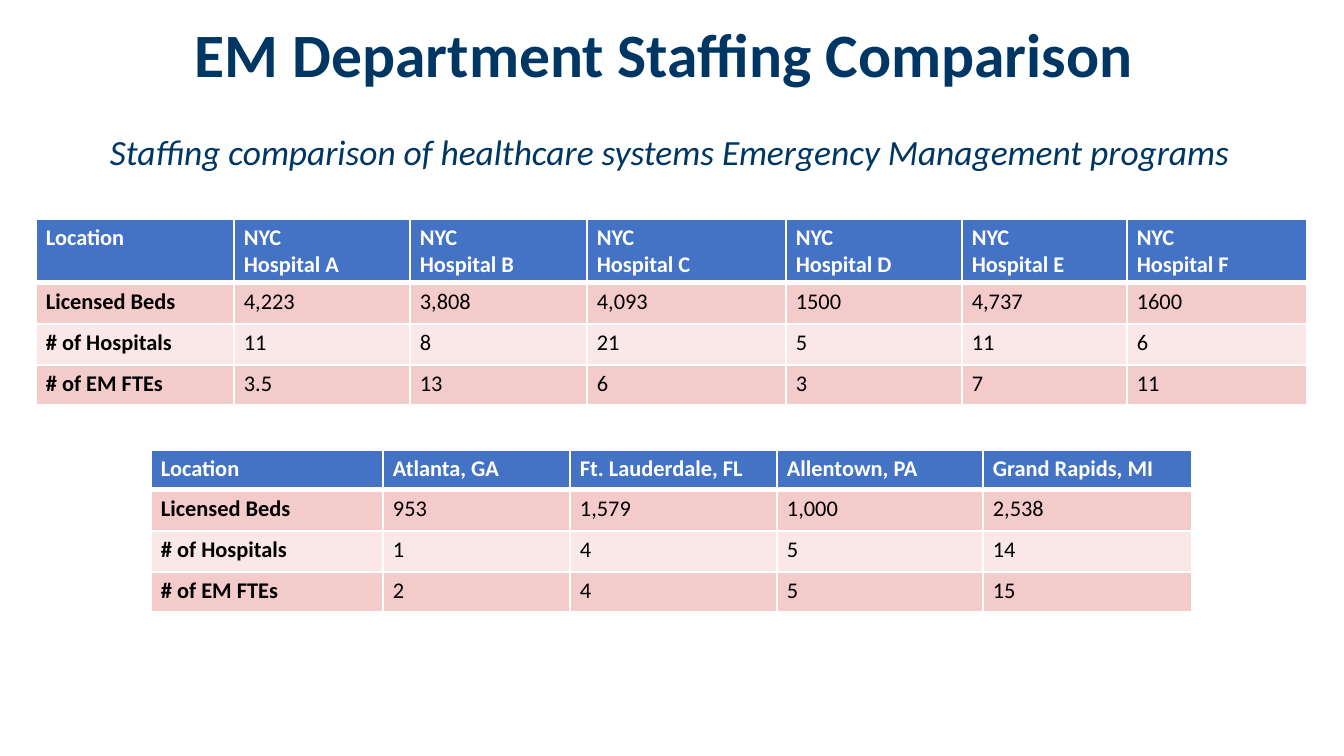
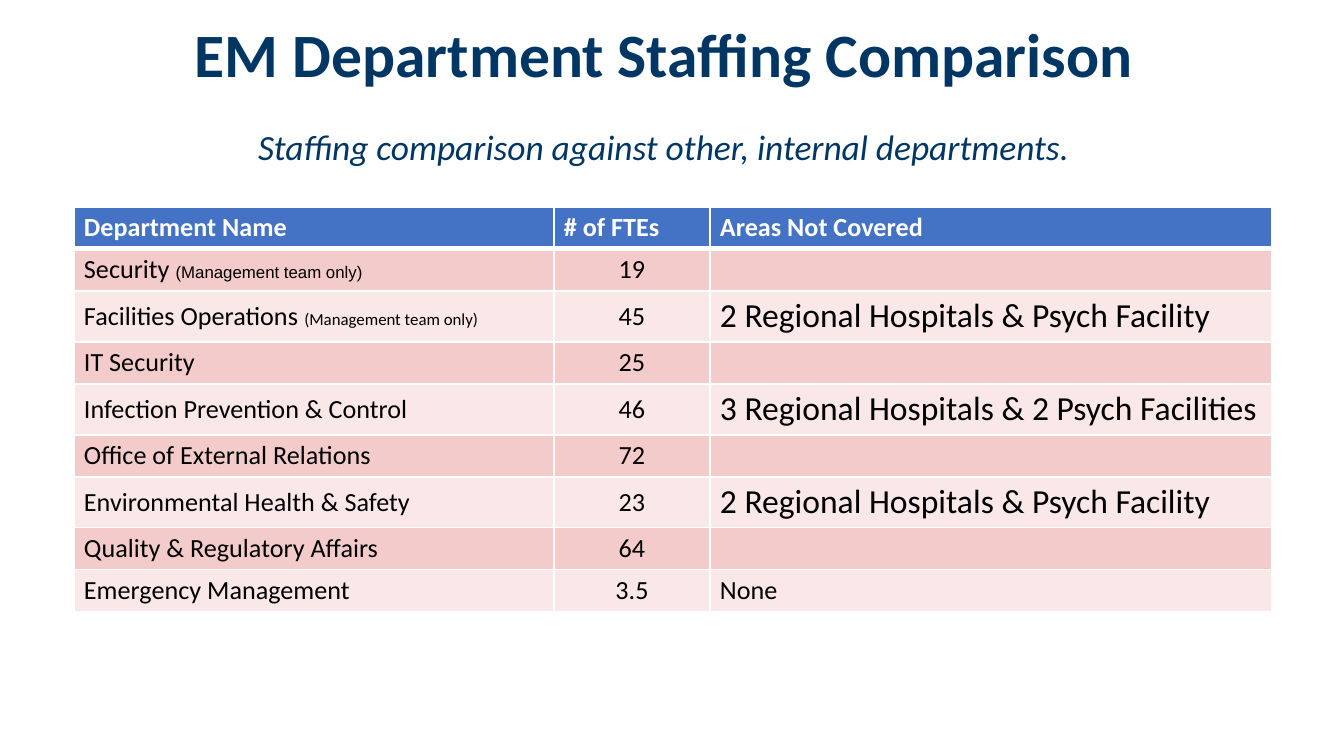
from lxml.etree import SubElement
from pptx import Presentation
from pptx.dml.color import RGBColor
from pptx.enum.text import MSO_ANCHOR, PP_ALIGN
from pptx.oxml.ns import qn
from pptx.util import Pt

EMU_PER_PX = 914400 / 134.4
NAVY = RGBColor(0x00, 0x36, 0x63)
BLUE = RGBColor(0x44, 0x72, 0xC4)
ROSE = RGBColor(0xF4, 0xCB, 0xCB)
PALE_ROSE = RGBColor(0xFA, 0xE7, 0xE7)
WHITE = RGBColor(0xFF, 0xFF, 0xFF)
BLACK = RGBColor(0x00, 0x00, 0x00)

TITLE = "EM Department Staffing Comparison"
NOTE = "(Management team only)"

NYC_COLS = [198, 176, 177, 199, 176, 165, 180]
NYC_ROWS = [
    ["Location"] + [f"NYC\nHospital {letter}" for letter in "ABCDEF"],
    ["Licensed Beds", "4,223", "3,808", "4,093", "1500", "4,737", "1600"],
    ["# of Hospitals", "11", "8", "21", "5", "11", "6"],
    ["# of EM FTEs", "3.5", "13", "6", "3", "7", "11"],
]
CITY_COLS = [232, 187, 207, 206, 209]
CITY_ROWS = [
    ["Location", "Atlanta, GA", "Ft. Lauderdale, FL", "Allentown, PA", "Grand Rapids, MI"],
    ["Licensed Beds", "953", "1,579", "1,000", "2,538"],
    ["# of Hospitals", "1", "4", "5", "14"],
    ["# of EM FTEs", "2", "4", "5", "15"],
]
DEPARTMENT_COLS = [480, 156, 562]
DEPARTMENT_ROWS = [
    ["Department Name", "# of FTEs", "Areas Not Covered"],
    ["Security ", "19", ""],
    ["Facilities Operations ", "45", "2 Regional Hospitals & Psych Facility"],
    ["IT Security", "25", ""],
    ["Infection Prevention & Control", "46", "3 Regional Hospitals & 2 Psych Facilities"],
    ["Office of External Relations", "72", ""],
    ["Environmental Health & Safety", "23", "2 Regional Hospitals & Psych Facility"],
    ["Quality & Regulatory Affairs", "64", ""],
    ["Emergency Management", "3.5", "None"],
]
NOTE_FONTS = {"Security ": "Arial", "Facilities Operations ": "Calibri"}


def px(n):
    return round(n * EMU_PER_PX)


def add_text(p, text, size, color=BLACK, font="Calibri", bold=False, italic=False):
    """Append text to a paragraph, breaking the line at each newline."""
    if not text:
        p._p.get_or_add_endParaRPr().set("sz", str(size * 100))
    for i, line in enumerate(text.split("\n") if text else []):
        if i:
            p.add_line_break()
        r = p.add_run()
        r.text = line
        r.font.name, r.font.size = font, Pt(size)
        r.font.bold, r.font.italic = bold, italic
        r.font.color.rgb = color


def add_heading(s, text, x, y, w, h, line_spacing=1.0, **fmt):
    tf = s.shapes.add_textbox(px(x), px(y), px(w), px(h)).text_frame
    tf.margin_left = tf.margin_top = tf.margin_right = tf.margin_bottom = 0
    p = tf.paragraphs[0]
    p.line_spacing = line_spacing
    add_text(p, text, color=NAVY, **fmt)


def add_slide(prs, subtitle, x, y, w):
    """Start a slide with the shared title and its own subtitle."""
    s = prs.slides.add_slide(prs.slide_layouts[6])
    add_heading(s, TITLE, 195, 24, 953, 75, line_spacing=0.9, size=33, bold=True)
    add_heading(s, subtitle, x, y, w, 58, size=19, italic=True)
    return s


def set_borders(cell, top=1, bottom=1):
    for side, width in {"L": 1, "R": 1, "T": top, "B": bottom}.items():
        ln = SubElement(cell._tc.get_or_add_tcPr(), qn(f"a:ln{side}"), w=str(Pt(width)))
        SubElement(SubElement(ln, qn("a:solidFill")), qn("a:srgbClr"), val=str(WHITE))


def add_banded_table(s, x, y, cols, heights, rows, write_cell, anchor=MSO_ANCHOR.TOP):
    """Draw a blue header over rose bands; write_cell fills in the body text."""
    frame = s.shapes.add_table(len(rows), len(cols), px(x), px(y), px(sum(cols)), px(sum(heights)))
    table = frame.table
    table.horz_banding = False
    for column, w in zip(table.columns, cols):
        column.width = px(w)
    for i, (row, h) in enumerate(zip(rows, heights)):
        table.rows[i].height = px(h)
        for j, text in enumerate(row):
            cell = table.cell(i, j)
            cell.margin_left = cell.margin_right = px(10)
            cell.margin_top = cell.margin_bottom = px(5)
            cell.vertical_anchor = anchor
            set_borders(cell, top=3 if i == 1 else 1, bottom=3 if i == 0 else 1)
            cell.fill.solid()
            cell.fill.fore_color.rgb = BLUE if i == 0 else ROSE if i % 2 else PALE_ROSE
            write_cell(cell.text_frame.paragraphs[0], text, i == 0, j)


def write_hospital_cell(p, text, header, col):
    add_text(p, text, 12, WHITE if header else BLACK, bold=header or col == 0)


def write_department_cell(p, text, header, col):
    if header:
        add_text(p, text, 14, WHITE, bold=True)
        return
    if col == 1:
        p.alignment = PP_ALIGN.CENTER
    add_text(p, text, 18 if "Regional" in text else 14)
    if text in NOTE_FONTS:
        add_text(p, NOTE, 9, font=NOTE_FONTS[text])


def build_hospital_slide(prs):
    s = add_slide(prs, "Staffing comparison of healthcare systems Emergency Management programs",
                  110, 130, 1122)
    add_banded_table(s, 36, 219, NYC_COLS, [64, 41, 41, 40], NYC_ROWS, write_hospital_cell)
    add_banded_table(s, 151, 450, CITY_COLS, [40, 41, 41, 40], CITY_ROWS, write_hospital_cell)


def build_department_slide(prs):
    s = add_slide(prs, "Staffing comparison against other, internal departments.", 258, 125, 827)
    heights = [51 if "Regional" in row[2] else 42 for row in DEPARTMENT_ROWS]
    add_banded_table(s, 74, 207, DEPARTMENT_COLS, heights, DEPARTMENT_ROWS,
                     write_department_cell, MSO_ANCHOR.MIDDLE)


def main():
    prs = Presentation()
    prs.slide_width, prs.slide_height = px(1344), px(756)
    build_hospital_slide(prs)
    build_department_slide(prs)
    prs.save("out.pptx")


if __name__ == "__main__":
    main()
